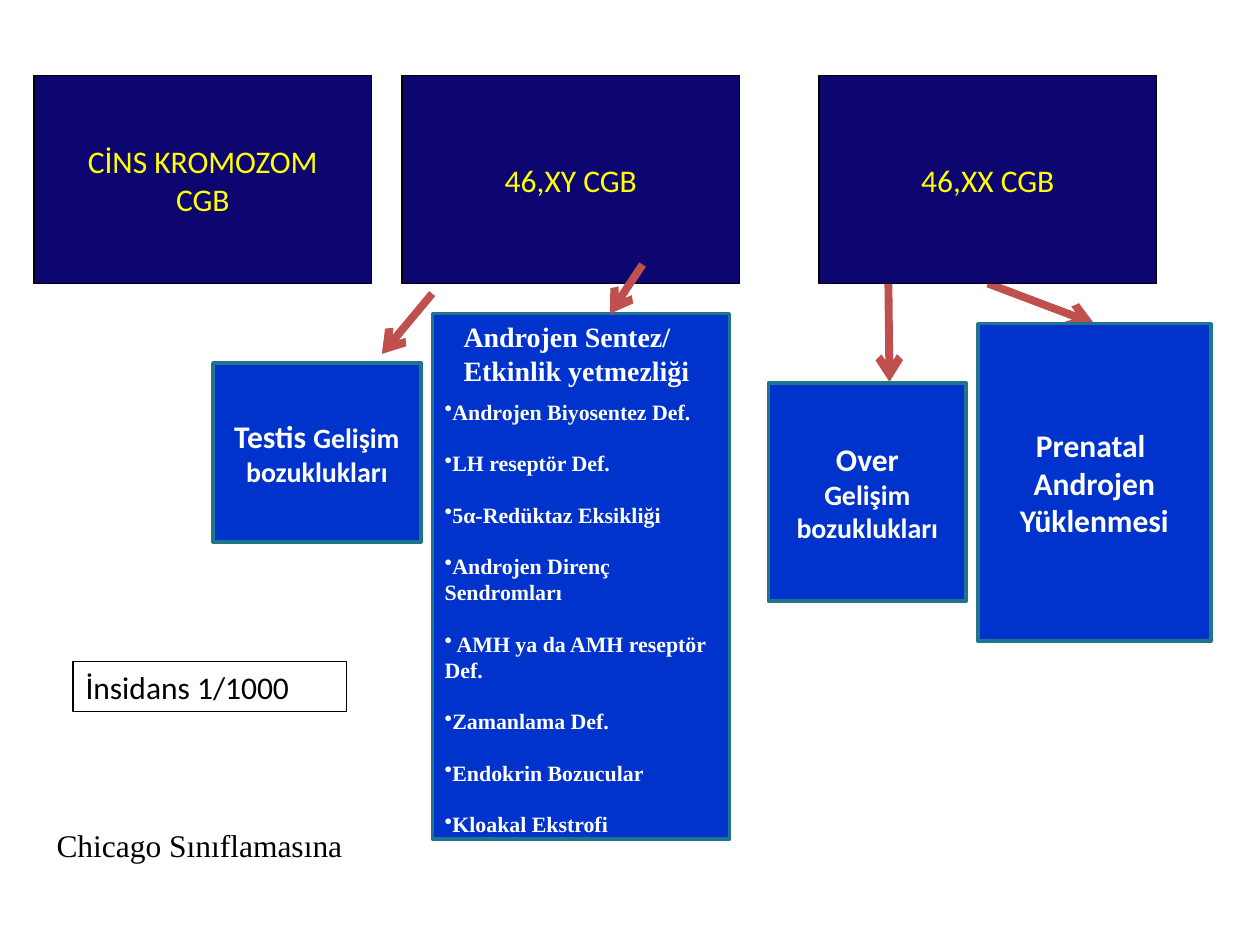
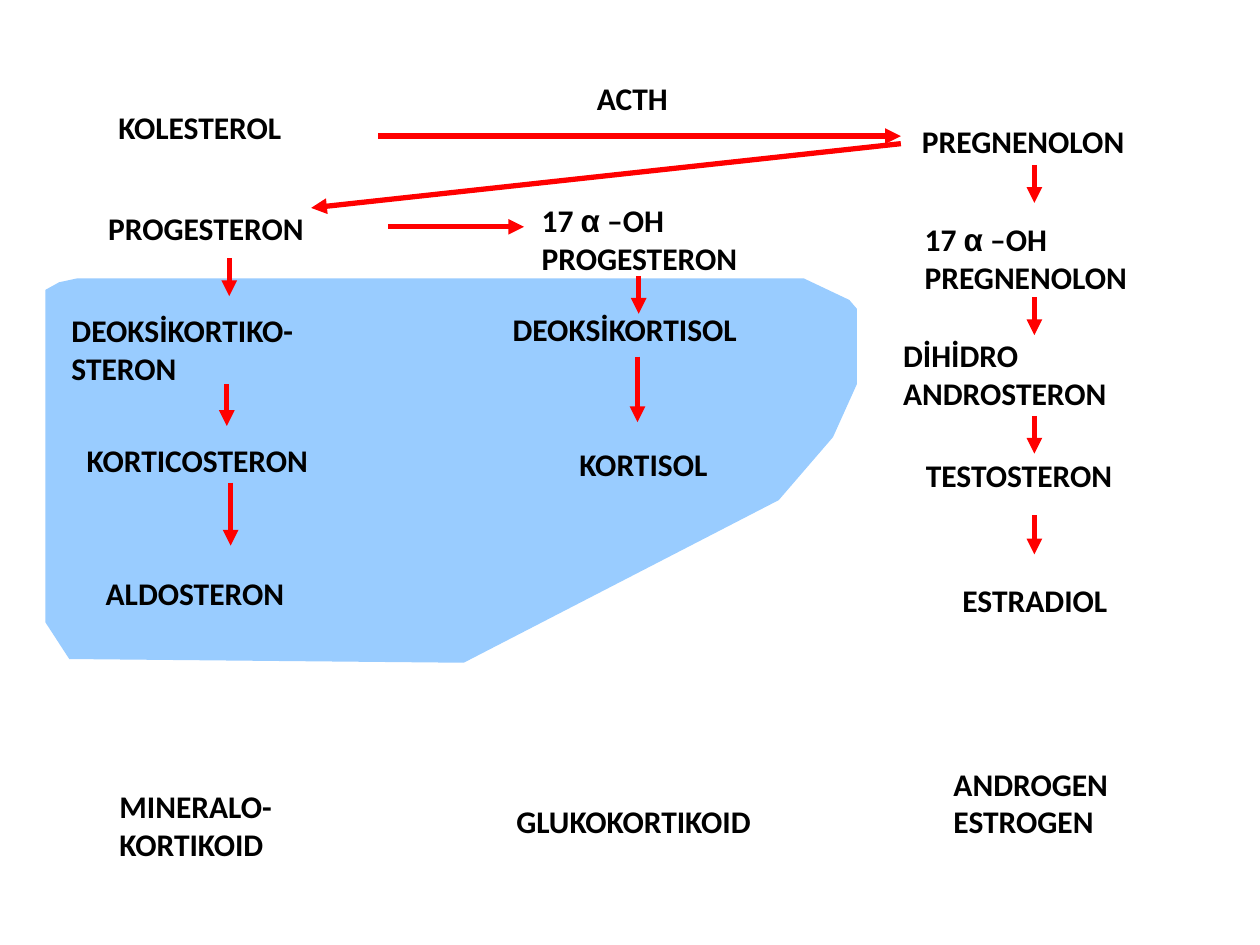
from lxml import etree
from pptx import Presentation
from pptx.dml.color import RGBColor
from pptx.enum import shapes, text
from pptx.oxml import ns
from pptx.util import Pt

NAVY = RGBColor(0x0E, 0x06, 0x70)
BLUE = RGBColor(0x00, 0x33, 0xCC)
TEAL = RGBColor(0x1E, 0x76, 0x8C)
BRICK = RGBColor(0xC0, 0x50, 0x4D)
SKY = RGBColor(0x99, 0xCC, 0xFF)
RED = RGBColor(0xFF, 0x00, 0x00)
YELLOW = RGBColor(0xFF, 0xFF, 0x00)
WHITE = RGBColor(0xFF, 0xFF, 0xFF)
BLACK = RGBColor(0x00, 0x00, 0x00)
SANS, SERIF, GREEK = "Calibri", "Times New Roman", "Arial"
LEFT, MID = text.PP_ALIGN.LEFT, text.PP_ALIGN.CENTER

DEFECTS = [
    "Androjen Biyosentez Def.", "LH reseptör Def.", "5α-Redüktaz Eksikliği",
    "Androjen Direnç Sendromları", " AMH ya da AMH reseptör Def.",
    "Zamanlama Def.", "Endokrin Bozucular", "Kloakal Ekstrofi",
]
# left, top, width, wording
STEROIDS = [
    (60.5, 58.3, 137.5, "KOLESTEROL"),
    (334, 41.8, 64.8, "ACTH"),
    (519.8, 66.2, 155.5, "PREGNENOLON"),
    (521.3, 122.4, 155.5, "17 α –OH\nPREGNENOLON"),
    (509, 188.6, 155.5, "DİHİDRO\nANDROSTERON"),
    (522, 257, 149.8, "TESTOSTERON"),
    (542.9, 328.3, 118.8, "ESTRADIOL"),
    (54.7, 115.9, 154.8, "PROGESTERON"),
    (33.8, 174.2, 172.8, "DEOKSİKORTIKO-\nSTERON"),
    (42.5, 248.4, 172.8, "KORTICOSTERON"),
    (53.3, 324.7, 140.4, "ALDOSTERON"),
    (302.4, 111.6, 154.8, "17 α –OH\nPROGESTERON"),
    (285.8, 173.5, 176.4, "DEOKSİKORTISOL"),
    (324, 250.6, 107.3, "KORTISOL"),
    (61.2, 446.4, 160.6, "MINERALO-KORTIKOID"),
    (288, 455, 180.7, "GLUKOKORTIKOID"),
    (537.8, 433.4, 124.6, "ANDROGEN\nESTROGEN"),
]
# centre, top, length of each downward step
STEPS = [
    (131, 147.6, 21.6), (129.6, 219.6, 23.8), (131.8, 275.8, 36),
    (365, 157.7, 21.6), (364.3, 203.8, 37.4),
    (591.1, 94.3, 21.6), (591.1, 169.9, 21.6),
    (591.1, 237.6, 21.6), (591.1, 294.5, 22.3),
]
ZONE = [
    (26, 173.5), (26, 355.7), (39.6, 376.6), (265, 378.7), (445, 285.8),
    (476, 249.8), (489.6, 219.6), (489.6, 176.4), (485.3, 171.4),
    (459.4, 159.1), (43.9, 159.1), (33.8, 161.3), (26, 165.6),
]


def style(run, size, ink, font=SANS, bold=False):
    run.font.size, run.font.name, run.font.bold = Pt(size), font, bold
    run.font.color.rgb = ink


def put(shape, words, size, ink, font=SANS, bold=False, align=LEFT):
    frame = shape.text_frame
    frame.word_wrap = True
    frame.text = words
    for para in frame.paragraphs:
        para.alignment = align
        for run in para.runs:
            style(run, size, ink, font, bold)
    return frame


def rect(slide, spot, fill, edge, width):
    box = slide.shapes.add_shape(shapes.MSO_SHAPE.RECTANGLE, *map(Pt, spot))
    box.shadow.inherit = False
    if fill is None:
        box.fill.background()
    else:
        box.fill.solid()
        box.fill.fore_color.rgb = fill
    box.line.color.rgb = edge
    box.line.width = Pt(width)
    box.text_frame.vertical_anchor = text.MSO_ANCHOR.MIDDLE
    return box


def head(slide, left, words):
    box = rect(slide, (left, 43.2, 193, 118.8), NAVY, BLACK, 0.75)
    put(box, words, 18, YELLOW, align=MID)
    return box


def panel(slide, spot, words):
    box = rect(slide, spot, BLUE, TEAL, 2)
    put(box, words, 18, WHITE, bold=True, align=MID)
    return box


def note(slide, spot, words, size, ink, font=SANS, bold=False):
    box = slide.shapes.add_textbox(*map(Pt, spot))
    return put(box, words, size, ink, font, bold)


def arrow(slide, start, end, ink, width, tip):
    line = slide.shapes.add_connector(
        shapes.MSO_CONNECTOR.STRAIGHT, *map(Pt, start + end))
    line.line.color.rgb = ink
    line.line.width = Pt(width)
    etree.SubElement(line.line._get_or_add_ln(), ns.qn("a:tailEnd"), type=tip)
    etree.SubElement(line._element.spPr, ns.qn("a:effectLst"))
    return line


def bullets(box, items):
    frame = put(box, "\n".join(items), 12.5, WHITE, SERIF, True)
    frame.vertical_anchor = text.MSO_ANCHOR.TOP
    frame.margin_top = Pt(48.4)
    for para in frame.paragraphs:
        para.space_after = Pt(14.4)
        props = para._p.get_or_add_pPr()
        props.set("marL", "0")
        props.set("indent", "0")
        etree.SubElement(props, ns.qn("a:buChar"), char="•")


def label(slide, left, top, width, words):
    tall = 50.4 if "-" in words or "\n" in words else 28.8
    frame = note(slide, (left, top, width, tall), words, 18, BLACK, bold=True)
    first = frame.paragraphs[0]
    lead, alpha, rest = first.text.partition("α")
    if alpha:
        first.text = lead
        for part, font in ((alpha, GREEK), (rest, SANS)):
            first.add_run().text = part
            style(first.runs[-1], 18, BLACK, font, True)
        style(first.runs[0], 18, BLACK, SANS, True)


def groups(slide):
    # Arrows that lie behind the boxes
    arrow(slide, (247, 167.8), (218.2, 202.3), BRICK, 4.5, "arrow")
    arrow(slide, (507.6, 157), (508.3, 218.2), BRICK, 4.5, "arrow")
    link = arrow(slide, (564.5, 162), (625.3, 185), BRICK, 4.5, "arrow")

    # Subgroups
    testis = panel(slide, (121.7, 207.4, 118.8, 102.2), "Testis \nbozuklukları")
    first, second = testis.text_frame.paragraphs
    first.add_run().text = "Gelişim"
    for run in (first.runs[-1], second.runs[0]):
        style(run, 16, WHITE, bold=True)
    bullets(rect(slide, (247, 179.3, 170, 300.2), BLUE, TEAL, 2), DEFECTS)
    over = panel(slide, (439.2, 218.9, 113, 124.6), "Over\nGelişim\nbozuklukları")
    for para in over.text_frame.paragraphs[1:]:
        style(para.runs[0], 16, WHITE, bold=True)
    load = panel(slide, (558.7, 185, 133.2, 181.4),
                 "Prenatal \nAndrojen\nYüklenmesi")
    note(slide, (257.8, 179.3, 152.6, 46),
         "Androjen Sentez/\nEtkinlik yetmezliği", 16, WHITE, SERIF, True)

    # Main classes
    head(slide, 19.4, "CİNS KROMOZOM\nCGB")
    head(slide, 229.7, "46,XY CGB")
    female = head(slide, 468, "46,XX CGB")
    link.begin_connect(female, 2)
    link.end_connect(load, 0)
    arrow(slide, (367.2, 151.2), (348.5, 179.3), BRICK, 4.5, "arrow")

    # Remarks
    rate = rect(slide, (41.8, 378, 156.2, 28.8), None, BLACK, 0.75)
    put(rate, "İnsidans 1/1000", 18, BLACK)
    note(slide, (25.2, 468.7, 195.8, 28.8),
         "Chicago Sınıflamasına", 18, BLACK, SERIF)


def pathway(slide):
    # Shaded zone
    start, *rest = [(Pt(x), Pt(y)) for x, y in ZONE]
    form = slide.shapes.build_freeform(*start)
    form.add_line_segments(rest, close=True)
    zone = form.convert_to_shape()
    zone.shadow.inherit = False
    zone.fill.solid()
    zone.fill.fore_color.rgb = SKY
    zone.line.fill.background()

    # Steroids and their steps
    for item in STEROIDS:
        label(slide, *item)
    paths = [((x, y), (x, y + drop)) for x, y, drop in STEPS]
    paths += [((216, 77.8), (514.8, 77.8)), ((514.8, 82.1), (177.8, 118.8)),
              ((221.8, 129.6), (299.5, 129.6))]
    for start, end in paths:
        arrow(slide, start, end, RED, 3, "triangle")


def main():
    deck = Presentation()
    deck.slide_width, deck.slide_height = Pt(720), Pt(540)
    for build in (groups, pathway):
        build(deck.slides.add_slide(deck.slide_layouts[6]))
    deck.save("out.pptx")


if __name__ == "__main__":
    main()
